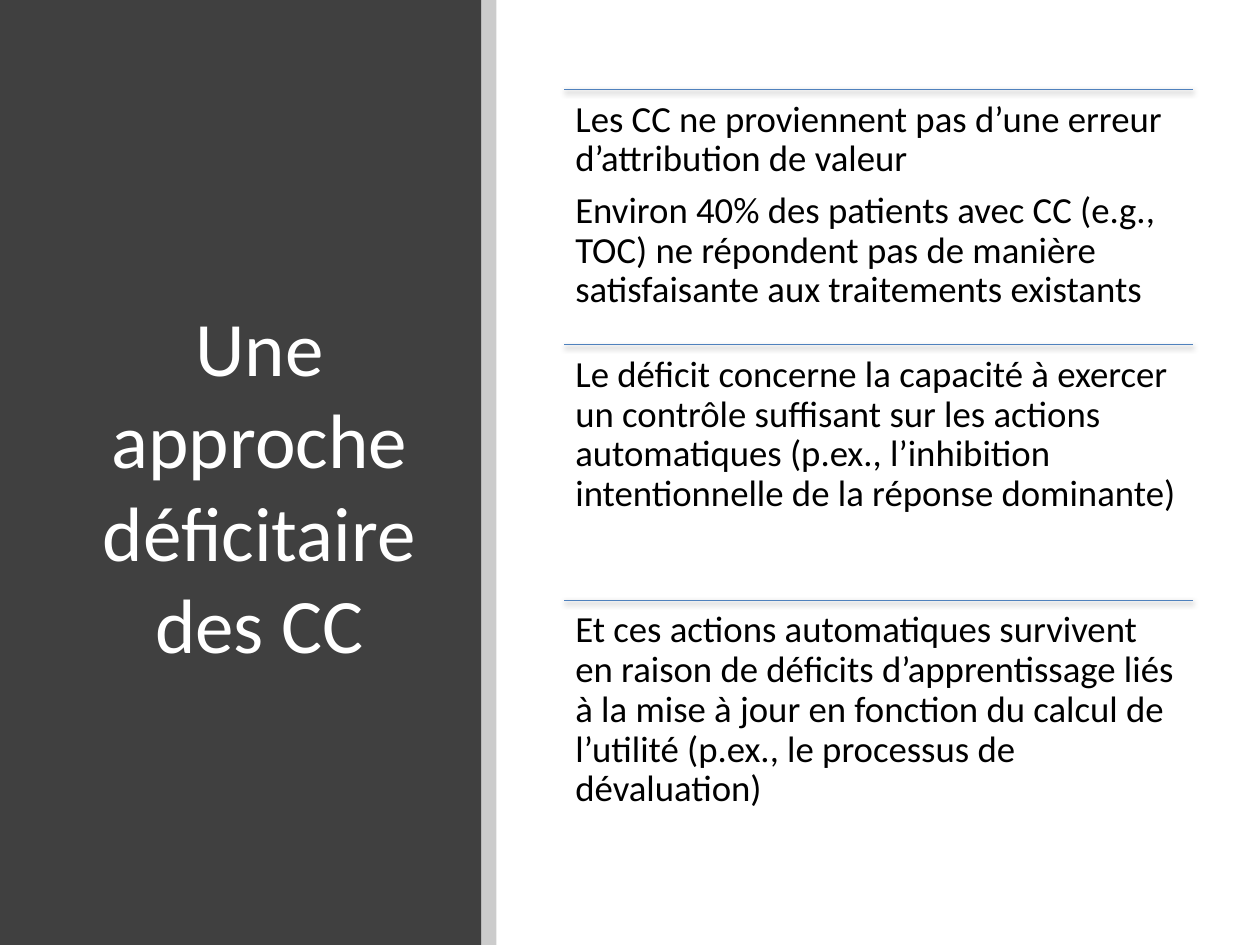
"""Build the slide on the deficit approach to CC."""
from lxml import etree
from pptx import Presentation
from pptx.dml.color import RGBColor
from pptx.enum import shapes, text
from pptx.oxml import ns
from pptx.util import Pt


def color(value):
    return RGBColor.from_string(value)


def add_text(box, paragraphs, size, fill):
    frame = box.text_frame
    frame.word_wrap = True
    frame.text = "\n".join(paragraphs)
    for paragraph in frame.paragraphs:
        paragraph.font.size = Pt(size)
        paragraph.font.name = "Calibri"
        paragraph.font.color.rgb = color(fill)
    return frame


presentation = Presentation()
presentation.slide_width, presentation.slide_height = Pt(720), Pt(540)
slide = presentation.slides.add_slide(presentation.slide_layouts[6])

for left, width, fill, opacity in [(0, 275, "404040", 100), (275, 8.7, "000000", 20)]:
    shape = slide.shapes.add_shape(
        shapes.MSO_SHAPE.RECTANGLE, Pt(left), 0, Pt(width), Pt(540))
    shape.shadow.inherit = False
    shape.line.fill.background()
    shape.fill.solid()
    shape.fill.fore_color.rgb = color(fill)
    if opacity < 100:
        fill_color = shape.fill._xPr.find(".//" + ns.qn("a:srgbClr"))
        etree.SubElement(fill_color, ns.qn("a:alpha"), val=str(opacity * 1000))

title = slide.shapes.add_textbox(Pt(49.5), Pt(64), Pt(197.5), Pt(425.5))
frame = add_text(title, ["Une approche déficitaire des CC"], 44, "FFFFFF")
frame.vertical_anchor = text.MSO_ANCHOR.MIDDLE
frame.paragraphs[0].alignment = text.PP_ALIGN.CENTER

sections = [
    ["Les CC ne proviennent pas d’une erreur d’attribution de valeur",
     "Environ 40% des patients avec CC (e.g., TOC) ne répondent pas de manière "
     "satisfaisante aux traitements existants"],
    ["Le déficit concerne la capacité à exercer un contrôle suffisant sur les actions "
     "automatiques (p.ex., l’inhibition intentionnelle de la réponse dominante)"],
    ["Et ces actions automatiques survivent en raison de déficits d’apprentissage liés "
     "à la mise à jour en fonction du calcul de l’utilité (p.ex., le processus de "
     "dévaluation)"],
]
left, top, width, height = 322.5, 51, 359.5, 146
for index, paragraphs in enumerate(sections):
    y = top + index * height
    rule = slide.shapes.add_connector(
        shapes.MSO_CONNECTOR.STRAIGHT, Pt(left), Pt(y), Pt(left + width), Pt(y))
    rule.line.color.rgb = color("4F81BD")
    rule.line.width = Pt(0.75)
    effects = etree.SubElement(rule._element.spPr, ns.qn("a:effectLst"))
    shadow = etree.SubElement(
        effects, ns.qn("a:outerShdw"), blurRad=str(Pt(3.1)), dist=str(Pt(1.6)),
        dir="5400000", rotWithShape="0")
    shadow_color = etree.SubElement(shadow, ns.qn("a:srgbClr"), val="000000")
    etree.SubElement(shadow_color, ns.qn("a:alpha"), val="38000")

    box = slide.shapes.add_textbox(Pt(left), Pt(y), Pt(width), Pt(height))
    frame = add_text(box, paragraphs, 21, "000000")
    frame.margin_left = frame.margin_right = Pt(6.3)
    frame.margin_top = frame.margin_bottom = Pt(6.3)
    for paragraph in frame.paragraphs:
        paragraph.line_spacing = 0.9
        paragraph.space_after = Pt(7)

presentation.save("out.pptx")
